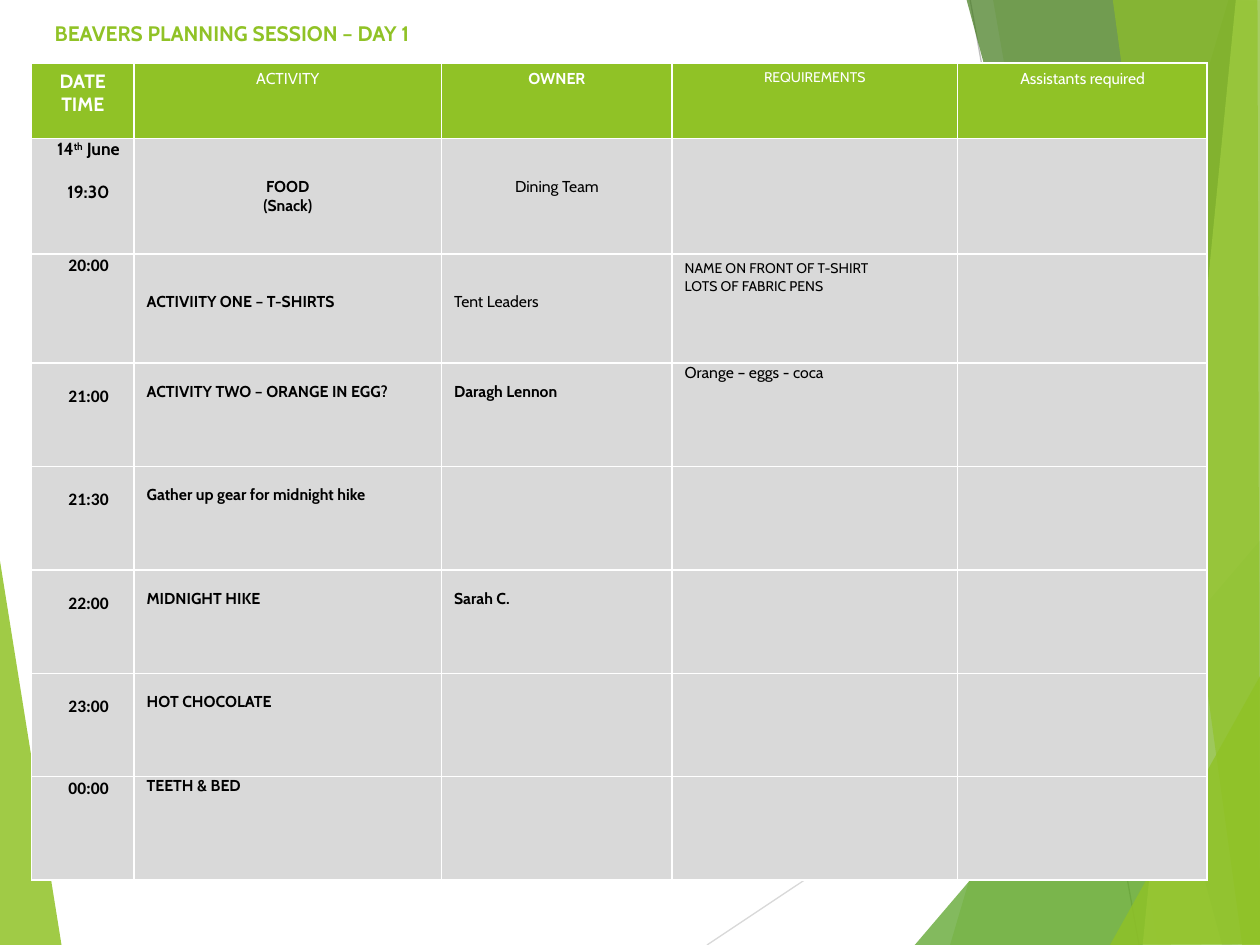
"""Build the Beavers day 1 planning slide."""
from dataclasses import dataclass
from typing import Any

from lxml import etree
from pptx import Presentation
from pptx import util as u
from pptx.dml.color import RGBColor
from pptx.enum import shapes, text
from pptx.oxml.ns import qn

COLORS = {
    "lime": "90C226", "green": "54A021", "forest": "3F7819", "pale": "C0E474",
    "cell": "D9D9D9", "ray": "BFBFBF", "ink": "000000", "white": "FFFFFF",
}
COLUMN_WIDTHS = [58.6, 175.7, 131.8, 163.2, 142.6]
ROW_HEIGHTS = [43.3, 65.8, 62.5] + [59.1] * 5
DATE, ACTIVITY, OWNER, NEEDS, HELPERS = range(5)


@dataclass(frozen=True)
class Facet:
    color: str
    opacity: int
    points: tuple[tuple[float, float], ...]


@dataclass(frozen=True)
class Ray:
    color: str
    start: tuple[float, float]
    end: tuple[float, float]


@dataclass(frozen=True)
class Entry:
    row: int
    column: int
    lines: tuple[str, ...]
    size: float = 9
    bold: bool = True
    drop: float = 0
    centred: bool = False
    font: str = "Cabin"
    color: str = "ink"
    gap: float = 0


DECOR = [
    Facet("lime", 85, ((-0.7, 316), (35.3, 540.7), (-0.7, 540))),
    Ray("cell", (404, 540), (720.7, 329)),
    Ray("ray", (554.4, 0), (650.9, 540)),
    Facet("lime", 30, ((702, 0), (542.9, 540), (721, 540.7), (720.7, 0.7))),
    Facet("lime", 20, ((567.4, -0.7), (661.7, 540), (720.7, 540), (720.7, -0.7))),
    Facet("green", 72, ((522.7, 540), (720, 308.9), (720.7, 540))),
    Facet("forest", 70, ((552.2, -0.7), (698.4, 540), (720.7, 539.3), (720.7, -0.7))),
    Facet("pale", 70, ((706.3, -0.7), (653, 540), (720.7, 540), (720, -0.7))),
    Facet("lime", 65, ((635.8, -0.7), (709.9, 540), (720, 540), (718.6, -0.7))),
    Facet("lime", 80, ((634.3, 540), (720.7, 385.2), (720.7, 539.3))),
]


def heading(column: int, *lines: str, size: float = 9, bold: bool = False) -> Entry:
    """Describe one header cell."""
    return Entry(0, column, lines, size, bold, 3.6, True, color="white")


def hour(row: int, time: str, drop: float = 13) -> Entry:
    """Describe one start time."""
    return Entry(row, DATE, (time,), 10, True, drop, True, "Calibri")


ENTRIES = [
    heading(DATE, "DATE", "TIME", size=11, bold=True),
    heading(ACTIVITY, "ACTIVITY"),
    heading(OWNER, "OWNER", bold=True),
    heading(NEEDS, "REQUIREMENTS", size=8),
    heading(HELPERS, "Assistants required"),
    Entry(1, DATE, ("14^th^ June", "19:30"), 10, centred=True, gap=12.2),
    Entry(1, ACTIVITY, ("FOOD", "(Snack)"), drop=22, centred=True),
    Entry(1, OWNER, ("Dining Team",), bold=False, drop=22, centred=True),
    hour(2, "20:00", 0.7),
    Entry(2, ACTIVITY, ("ACTIVIITY ONE – T-SHIRTS",), drop=22),
    Entry(2, OWNER, ("Tent Leaders",), bold=False, drop=22),
    Entry(2, NEEDS, ("NAME ON FRONT OF T-SHIRT", "LOTS OF FABRIC PENS"), 8, False, 3.6),
    hour(3, "21:00"),
    Entry(3, ACTIVITY, ("ACTIVITY TWO – ORANGE IN EGG?",), drop=11),
    Entry(3, OWNER, ("Daragh Lennon",), drop=11),
    Entry(3, NEEDS, ("Orange – eggs - coca",), bold=False),
    hour(4, "21:30"),
    Entry(4, ACTIVITY, ("Gather up gear for midnight hike",), drop=11),
    hour(5, "22:00"),
    Entry(5, ACTIVITY, ("MIDNIGHT HIKE",), drop=11),
    Entry(5, OWNER, ("Sarah C.",), drop=11),
    hour(6, "23:00"),
    Entry(6, ACTIVITY, ("HOT CHOCOLATE",), drop=11),
    hour(7, "00:00", 0.7),
    Entry(7, ACTIVITY, ("TEETH & BED",)),
]


def apply(target: Any, formats: dict[str, Any]) -> None:
    """Set every attribute in the format dict."""
    for name, value in formats.items():
        setattr(target, name, value)


def paint(fill: Any, color: str) -> None:
    """Give a fill a solid named colour."""
    fill.solid()
    fill.fore_color.rgb = RGBColor.from_string(COLORS[color])


def style_font(font: Any, name: str, size: float, bold: bool, color: str) -> None:
    """Format a font."""
    apply(font, {"name": name, "size": u.Pt(size), "bold": bold})
    font.color.rgb = RGBColor.from_string(COLORS[color])


def draw_facet(slide: Any, facet: Facet) -> None:
    """Draw a translucent polygon."""
    first, *rest = [(u.Pt(x), u.Pt(y)) for x, y in facet.points]
    builder = slide.shapes.build_freeform(*first, scale=1.0)
    builder.add_line_segments(rest, close=True)
    polygon = builder.convert_to_shape()
    polygon.shadow.inherit = False
    polygon.line.fill.background()
    paint(polygon.fill, facet.color)
    tint = polygon._element.spPr.find(".//" + qn("a:srgbClr"))
    etree.SubElement(tint, qn("a:alpha"), val=str(facet.opacity * 1000))


def draw_ray(slide: Any, ray: Ray) -> None:
    """Draw a thin straight line."""
    ends = [u.Pt(value) for value in ray.start + ray.end]
    line = slide.shapes.add_connector(shapes.MSO_CONNECTOR.STRAIGHT, *ends)
    line.line.width = u.Pt(0.75)
    paint(line.line.fill, ray.color)
    etree.SubElement(line._element.spPr, qn("a:effectLst"))


def write_entry(schedule: Any, entry: Entry) -> None:
    """Write one entry into its cell, with superscripts between carets."""
    cell = schedule.cell(entry.row, entry.column)
    apply(cell, {
        "margin_left": u.Pt(7.2),
        "margin_right": u.Pt(0.7 if entry.column == DATE and entry.row else 7.2),
        "margin_top": u.Pt(entry.drop),
        "margin_bottom": u.Pt(0),
    })
    frame = cell.text_frame
    for index, line in enumerate(entry.lines):
        paragraph = frame.add_paragraph() if index else frame.paragraphs[0]
        align = text.PP_ALIGN.CENTER if entry.centred else text.PP_ALIGN.LEFT
        apply(paragraph, {"alignment": align, "space_before": u.Pt(entry.gap if index else 0)})
        for part, wording in enumerate(line.split("^")):
            run = paragraph.add_run()
            run.text = wording
            style_font(run.font, entry.font, entry.size, entry.bold, entry.color)
            if part % 2:
                run._r.get_or_add_rPr().set("baseline", "30000")


def draw_schedule(slide: Any) -> None:
    """Draw the schedule table."""
    frame = slide.shapes.add_table(
        len(ROW_HEIGHTS), len(COLUMN_WIDTHS), u.Pt(18), u.Pt(36),
        u.Pt(sum(COLUMN_WIDTHS)), u.Pt(sum(ROW_HEIGHTS)))
    schedule = frame.table
    schedule.horz_banding = False
    for column, width in zip(schedule.columns, COLUMN_WIDTHS):
        column.width = u.Pt(width)
    for index, (row, height) in enumerate(zip(schedule.rows, ROW_HEIGHTS)):
        row.height = u.Pt(height)
        for cell in row.cells:
            paint(cell.fill, "cell" if index else "lime")
    for entry in ENTRIES:
        write_entry(schedule, entry)


def write_title(slide: Any) -> None:
    """Place the title in front of the decoration."""
    title = slide.shapes.title
    apply(title, {"left": u.Pt(24), "top": u.Pt(-6), "width": u.Pt(666), "height": u.Pt(48)})
    frame = title.text_frame
    frame.text = "BEAVERS PLANNING SESSION – DAY 1"
    apply(frame, {"vertical_anchor": text.MSO_ANCHOR.TOP, "margin_top": u.Pt(18),
                  "margin_left": u.Pt(7.2), "auto_size": text.MSO_AUTO_SIZE.NONE})
    frame.paragraphs[0].alignment = text.PP_ALIGN.LEFT
    style_font(frame.paragraphs[0].runs[0].font, "Cabin", 12, True, "lime")
    slide.shapes._spTree.append(title._element)


def main() -> None:
    """Build and save the slide."""
    deck = Presentation()
    apply(deck, {"slide_width": u.Pt(720), "slide_height": u.Pt(540)})
    slide = deck.slides.add_slide(deck.slide_layouts[5])
    for part in DECOR:
        draw = draw_facet if isinstance(part, Facet) else draw_ray
        draw(slide, part)
    write_title(slide)
    draw_schedule(slide)
    deck.save("out.pptx")


if __name__ == "__main__":
    main()
